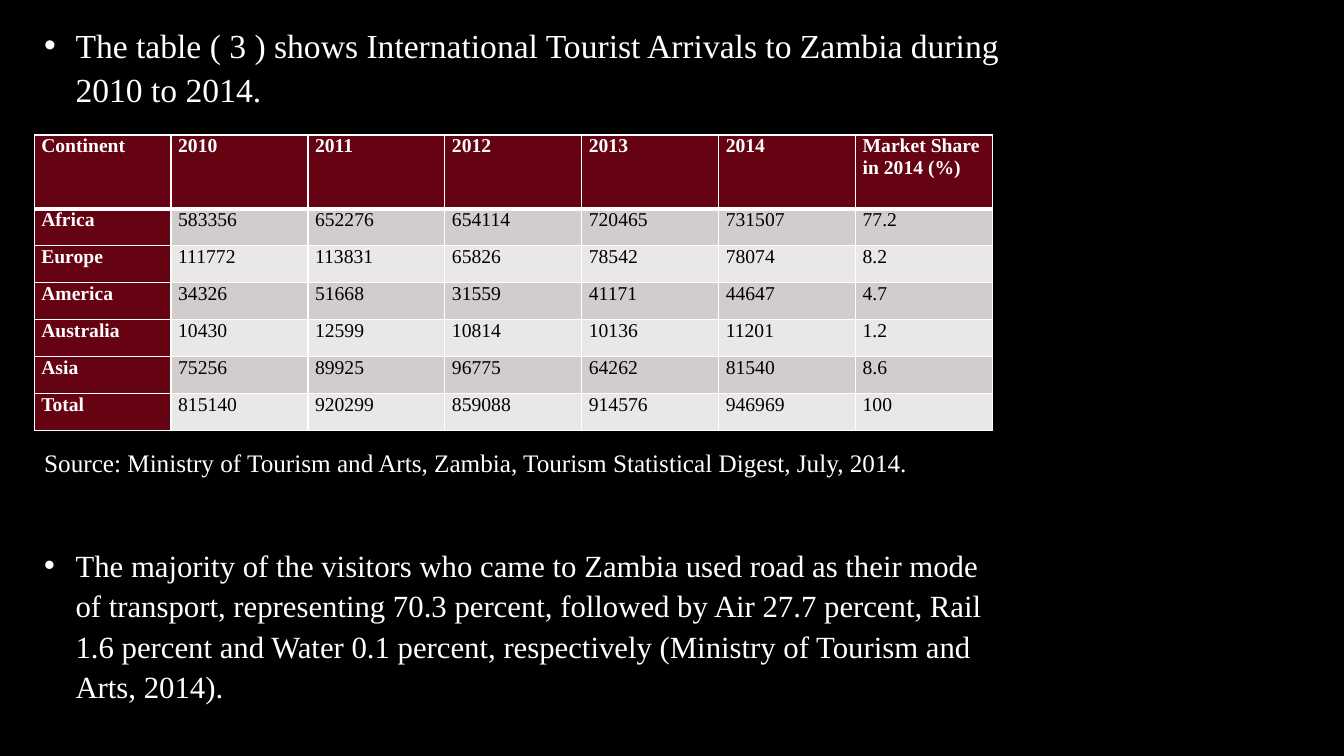
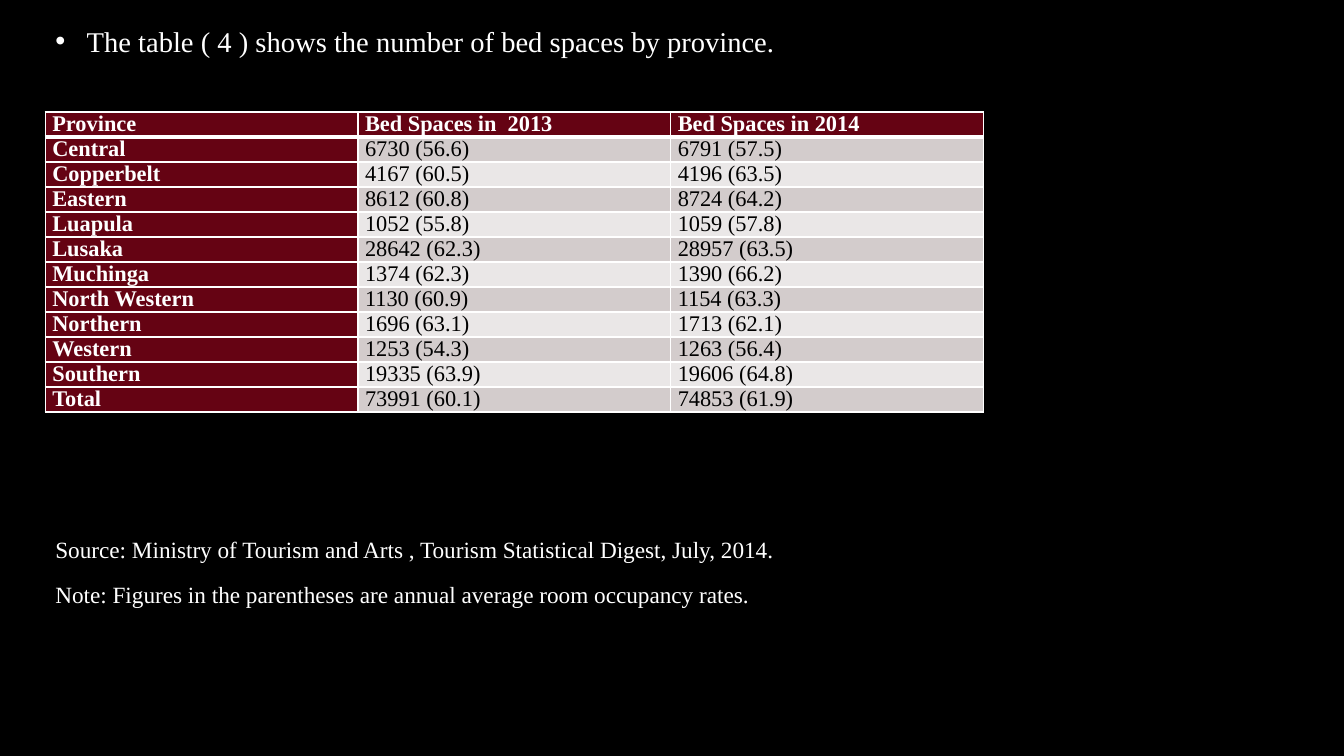
from dataclasses import dataclass

from lxml import etree
from pptx import Presentation
from pptx import util as u
from pptx.dml.color import RGBColor
from pptx.enum import text
from pptx.oxml import ns


@dataclass(frozen=True)
class Theme:
    """Colours, type and shared measures of the deck."""
    font: str = "Times New Roman"
    background: str = "000000"
    light: str = "FFFFFF"
    dark: str = "000000"
    accent: str = "650313"
    bands: tuple = ("D3CCCC", "EAE7E7")
    line_spacing: float = 1.09
    hanging: u.Length = u.Cm(0.79)
    cell_margin: u.Length = u.Cm(0.18)
    rule: float = 1
    header_rule: float = 3


@dataclass(frozen=True)
class Box:
    """A region of a slide."""
    left: u.Length
    top: u.Length
    width: u.Length
    height: u.Length


@dataclass(frozen=True)
class Line:
    """A paragraph of the body with its size and the gap above it."""
    words: str
    size: float
    gap: float = 0
    bullet: bool = False


THEME = Theme()

ARRIVALS = [
    ["Continent", "2010", "2011", "2012", "2013", "2014", "Market Share in 2014 (%)"],
    ["Africa", "583356", "652276", "654114", "720465", "731507", "77.2"],
    ["Europe", "111772", "113831", "65826", "78542", "78074", "8.2"],
    ["America", "34326", "51668", "31559", "41171", "44647", "4.7"],
    ["Australia", "10430", "12599", "10814", "10136", "11201", "1.2"],
    ["Asia", "75256", "89925", "96775", "64262", "81540", "8.6"],
    ["Total", "815140", "920299", "859088", "914576", "946969", "100"],
]
ARRIVALS_TEXT = [
    Line("The table ( 3 ) shows International Tourist Arrivals to Zambia during "
         "2010 to 2014.", 24, bullet=True),
    Line("Source: Ministry of Tourism and Arts, Zambia, Tourism Statistical Digest, "
         "July, 2014.", 18, gap=240),
    Line("The majority of the visitors who came to Zambia used road as their mode of "
         "transport, representing 70.3 percent, followed by Air 27.7 percent, Rail "
         "1.6 percent and Water 0.1 percent, respectively (Ministry of Tourism and "
         "Arts, 2014).", 22, gap=47, bullet=True),
]

BED_SPACES = [
    ["Province", "Bed Spaces in  2013", "Bed Spaces in 2014"],
    ["Central", "6730 (56.6)", "6791 (57.5)"],
    ["Copperbelt", "4167 (60.5)", "4196 (63.5)"],
    ["Eastern", "8612 (60.8)", "8724 (64.2)"],
    ["Luapula", "1052 (55.8)", "1059 (57.8)"],
    ["Lusaka", "28642 (62.3)", "28957 (63.5)"],
    ["Muchinga", "1374 (62.3)", "1390 (66.2)"],
    ["North Western", "1130 (60.9)", "1154 (63.3)"],
    ["Northern", "1696 (63.1)", "1713 (62.1)"],
    ["Western", "1253 (54.3)", "1263 (56.4)"],
    ["Southern", "19335 (63.9)", "19606 (64.8)"],
    ["Total", "73991 (60.1)", "74853 (61.9)"],
]
BED_SPACES_TEXT = [
    Line("The table ( 4 ) shows the number of bed spaces by province.", 20.4, bullet=True),
    Line("Source: Ministry of Tourism and Arts , Tourism Statistical Digest, July, 2014.",
         16.6, gap=339),
    Line("Note: Figures in the parentheses are annual average room occupancy rates.",
         16.6, gap=10),
]


def format_runs(paragraph, size, colour, bold=False):
    """Give every run of a paragraph the deck's font."""
    for run in paragraph.runs:
        run.font.name = THEME.font
        run.font.size = u.Pt(size)
        run.font.bold = bold
        run.font.color.rgb = RGBColor.from_string(colour)


def add_colour(parent, tag, colour):
    """Append an element that holds one plain colour."""
    holder = etree.SubElement(parent, ns.qn(tag))
    etree.SubElement(holder, ns.qn("a:srgbClr"), val=colour)


def set_bullet(paragraph, bullet):
    """Hang a paragraph from a bullet, or set it flush without one."""
    properties = paragraph._p.get_or_add_pPr()
    hanging = THEME.hanging if bullet else 0
    properties.set("marL", str(hanging))
    properties.set("indent", str(-hanging))
    if bullet:
        add_colour(properties, "a:buClr", THEME.light)
        etree.SubElement(properties, ns.qn("a:buChar"), char="•")
    else:
        etree.SubElement(properties, ns.qn("a:buNone"))


def fill_body(body, box, lines):
    """Place the body placeholder in its box and write its paragraphs."""
    body.left, body.top, body.width, body.height = box.left, box.top, box.width, box.height
    frame = body.text_frame
    frame.auto_size = text.MSO_AUTO_SIZE.NONE
    frame.vertical_anchor = text.MSO_ANCHOR.TOP
    frame.text = "\n".join(line.words for line in lines)
    for paragraph, line in zip(frame.paragraphs, lines):
        set_bullet(paragraph, line.bullet)
        paragraph.line_spacing = THEME.line_spacing
        paragraph.space_before = u.Pt(line.gap)
        paragraph.space_after = u.Pt(0)
        format_runs(paragraph, line.size, THEME.light)


def set_borders(cell, top, bottom):
    """Rule the four sides of a cell."""
    properties = cell._tc.get_or_add_tcPr()
    sides = {"a:lnL": THEME.rule, "a:lnR": THEME.rule, "a:lnT": top, "a:lnB": bottom}
    for side, width in sides.items():
        rule = etree.SubElement(properties, ns.qn(side), w=str(u.Pt(width)))
        add_colour(rule, "a:solidFill", THEME.light)


def fill_cell(cell, words, row, column, size):
    """Write and style one cell according to its place in the table."""
    heading = row == 0 or column == 0
    set_borders(cell,
                top=THEME.header_rule if row == 1 else THEME.rule,
                bottom=THEME.header_rule if row == 0 else THEME.rule)
    cell.fill.solid()
    cell.fill.fore_color.rgb = RGBColor.from_string(
        THEME.accent if heading else THEME.bands[(row - 1) % 2])
    cell.margin_left = cell.margin_right = THEME.cell_margin
    cell.margin_top = cell.margin_bottom = 0
    cell.text_frame.text = words
    format_runs(cell.text_frame.paragraphs[0], size,
                THEME.light if heading else THEME.dark, heading)


def add_figures(slide, box, figures, size, header_rows):
    """Add a table whose header is as tall as header_rows data rows."""
    grid = slide.shapes.add_table(len(figures), len(figures[0]), box.left, box.top,
                                  box.width, box.height).table
    grid.first_col = True
    row_height = int(box.height / (len(figures) - 1 + header_rows))
    for row, values in enumerate(figures):
        grid.rows[row].height = row_height * (header_rows if row == 0 else 1)
        for column, words in enumerate(values):
            fill_cell(grid.cell(row, column), words, row, column, size)


def add_table_slide(deck, box, lines, figures, table_box, size, header_rows=1):
    """Add a slide with a table set into the gap of its body text."""
    slide = deck.slides.add_slide(deck.slide_layouts[1])
    title = slide.shapes.title.element
    title.getparent().remove(title)
    fill_body(slide.placeholders[1], box, lines)
    placed = Box(box.left, box.top + table_box.top, table_box.width, table_box.height)
    add_figures(slide, placed, figures, size, header_rows)


def main():
    """Build and save the deck."""
    deck = Presentation()
    deck.slide_width, deck.slide_height = u.Cm(33.87), u.Cm(19.05)
    backdrop = deck.slide_master.background.fill
    backdrop.solid()
    backdrop.fore_color.rgb = RGBColor.from_string(THEME.background)

    add_table_slide(deck, Box(u.Cm(0.86), u.Cm(0.4), u.Cm(24.77), u.Cm(17.8)),
                    ARRIVALS_TEXT, ARRIVALS,
                    Box(0, u.Cm(3), u.Cm(24.15), u.Cm(7.45)), 14, header_rows=2)
    add_table_slide(deck, Box(u.Cm(1.14), u.Cm(0.4), u.Cm(24.77), u.Cm(17.8)),
                    BED_SPACES_TEXT, BED_SPACES,
                    Box(0, u.Cm(2.42), u.Cm(23.64), u.Cm(7.56)), 16)
    deck.save("out.pptx")


if __name__ == "__main__":
    main()
